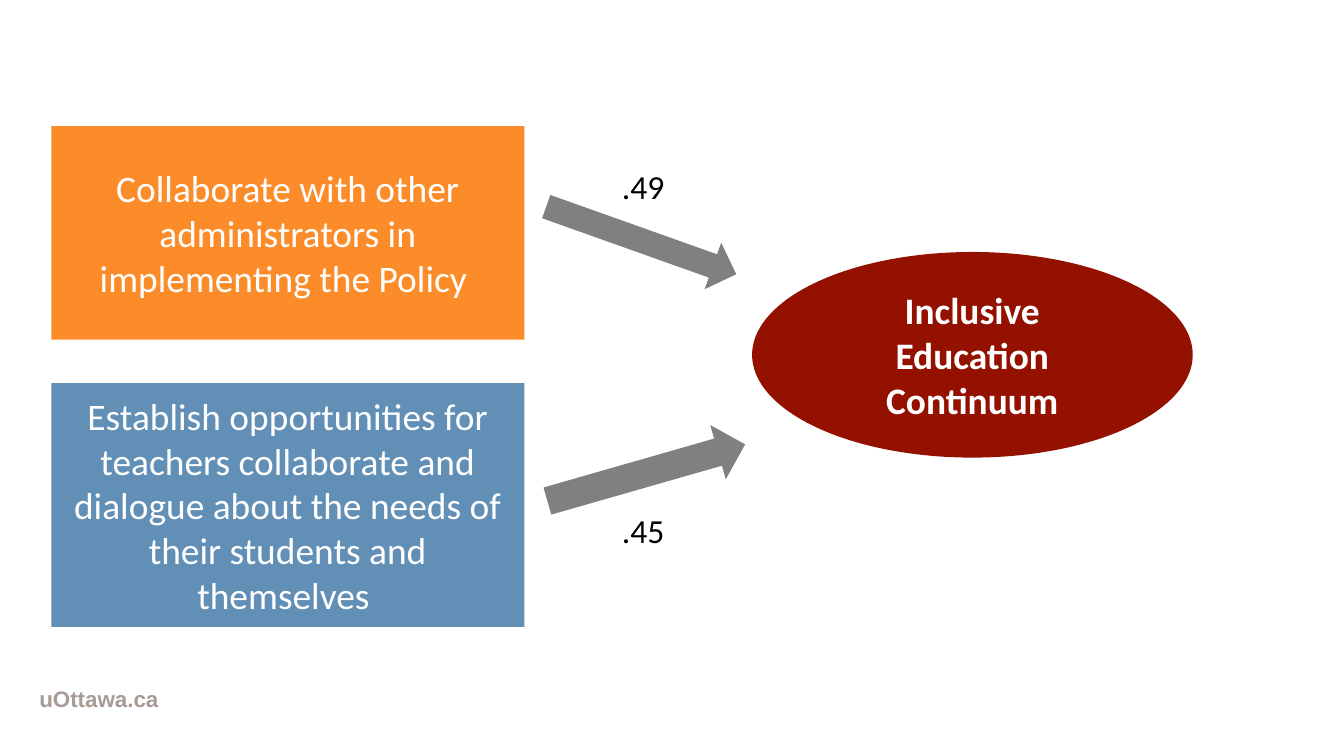
import pptx
import pptx.util
import pptx.dml.color
import pptx.enum.shapes
import pptx.enum.text
from dataclasses import dataclass

Inches = pptx.util.Inches
Shape = pptx.enum.shapes.MSO_SHAPE
Align = pptx.enum.text.PP_ALIGN
Anchor = pptx.enum.text.MSO_ANCHOR


@dataclass(frozen=True)
class Theme:
    orange: str = "FB8C29"
    blue: str = "628FB6"
    red: str = "941100"
    gray: str = "808080"
    stone: str = "A69C95"
    white: str = "FFFFFF"
    black: str = "000000"
    body: str = "Calibri"
    brand: str = "Arial"
    large: float = 26.7
    label: float = 24
    small: float = 16


theme = Theme()

boxes = [
    ("Collaborate with other administrators in implementing the Policy ",
     1.25, 2.12, theme.orange),
    ("Establish opportunities for teachers collaborate and dialogue about "
     "the needs of their students and themselves ", 3.8, 2.42, theme.blue),
]
goal = ("Inclusive Education Continuum", (7.46, 2.5, 4.37, 2.04))
arrows = [
    ((5.36, 2.14, 2, 0.49), 19.6),
    ((5.39, 4.41, 2.04, 0.56), 344),
]
labels = [(".49", 1.6), (".45", 5.01)]
footer = ("uOttawa.ca", (0.26, 6.73, 6.61, 0.39))

box_x, box_w = 0.51, 4.69
label_x, label_w, label_h = 6.07, 0.65, 0.5


def color(code):
    return pptx.dml.color.RGBColor.from_string(code)


def draw(slide, kind, place, fill, turn=0):
    shape = slide.shapes.add_shape(kind, *map(Inches, place))
    shape.shadow.inherit = False
    shape.fill.solid()
    shape.fill.fore_color.rgb = color(fill)
    shape.line.fill.background()
    shape.rotation = turn
    return shape


def write(shape, text, size=theme.large, ink=theme.white, face=theme.body,
          bold=False, align=Align.CENTER, anchor=Anchor.MIDDLE, pad=(0.1, 0.05)):
    frame = shape.text_frame
    frame.word_wrap = True
    frame.vertical_anchor = anchor
    frame.margin_left = frame.margin_right = Inches(pad[0])
    frame.margin_top = frame.margin_bottom = Inches(pad[1])
    line = frame.paragraphs[0]
    line.text = text
    line.alignment = align
    font = line.font
    font.size = pptx.util.Pt(size)
    font.name = face
    font.bold = bold
    font.color.rgb = color(ink)


def note(slide, text, place, **style):
    box = slide.shapes.add_textbox(*map(Inches, place))
    write(box, text, align=Align.LEFT, anchor=Anchor.TOP, **style)


def main():
    deck = pptx.Presentation()
    deck.slide_width = Inches(13.33)
    deck.slide_height = Inches(7.5)
    slide = deck.slides.add_slide(deck.slide_layouts[6])

    text, place = footer
    note(slide, text, place, size=theme.small, ink=theme.stone,
         face=theme.brand, bold=True, pad=(0.13, 0.07))

    text, place = goal
    write(draw(slide, Shape.OVAL, place, theme.red), text, bold=True)

    for text, top, high, fill in boxes:
        place = (box_x, top, box_w, high)
        write(draw(slide, Shape.RECTANGLE, place, fill), text)

    for place, turn in arrows:
        draw(slide, Shape.RIGHT_ARROW, place, theme.gray, turn)

    for text, top in labels:
        note(slide, text, (label_x, top, label_w, label_h),
             size=theme.label, ink=theme.black)

    deck.save("out.pptx")


if __name__ == "__main__":
    main()
